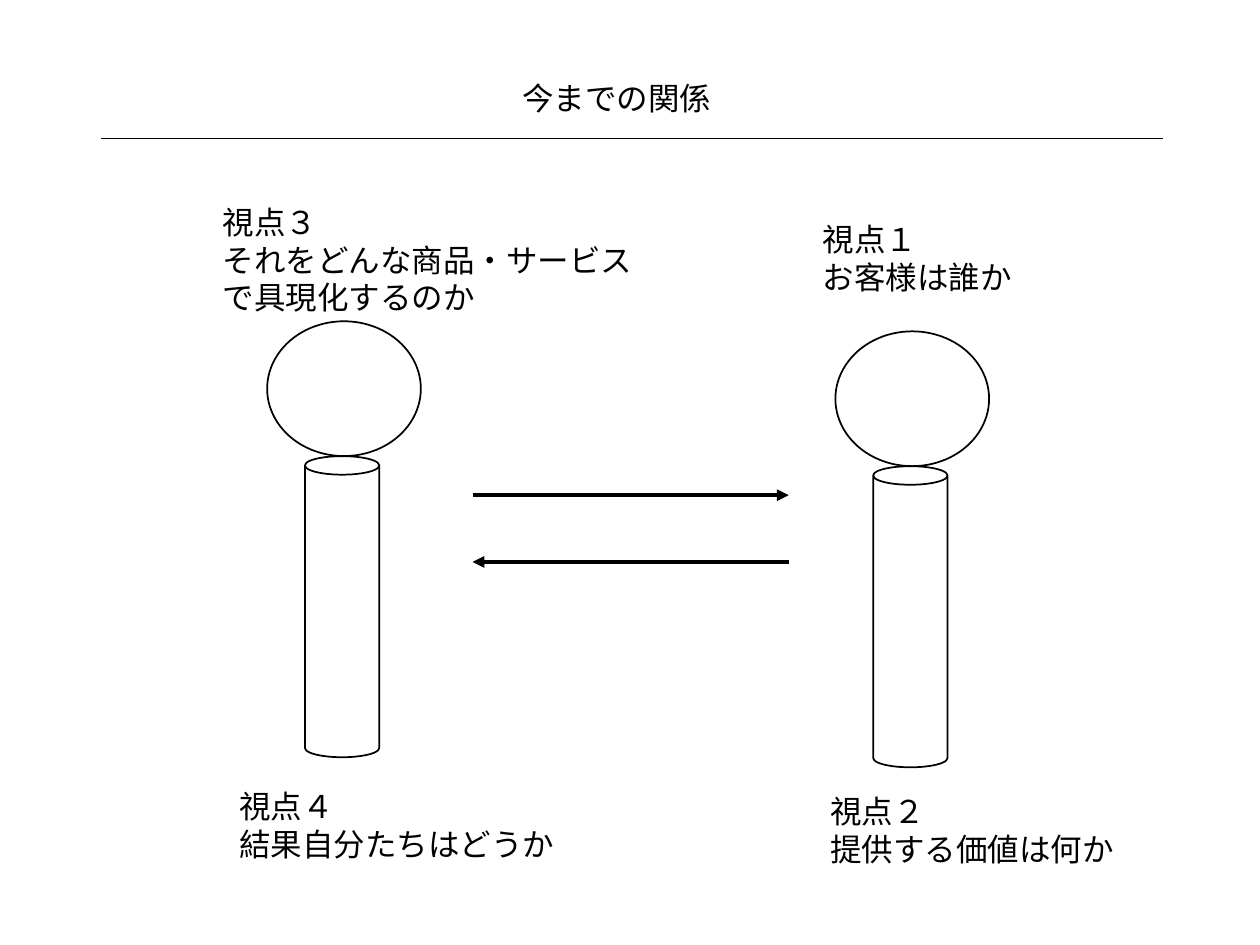
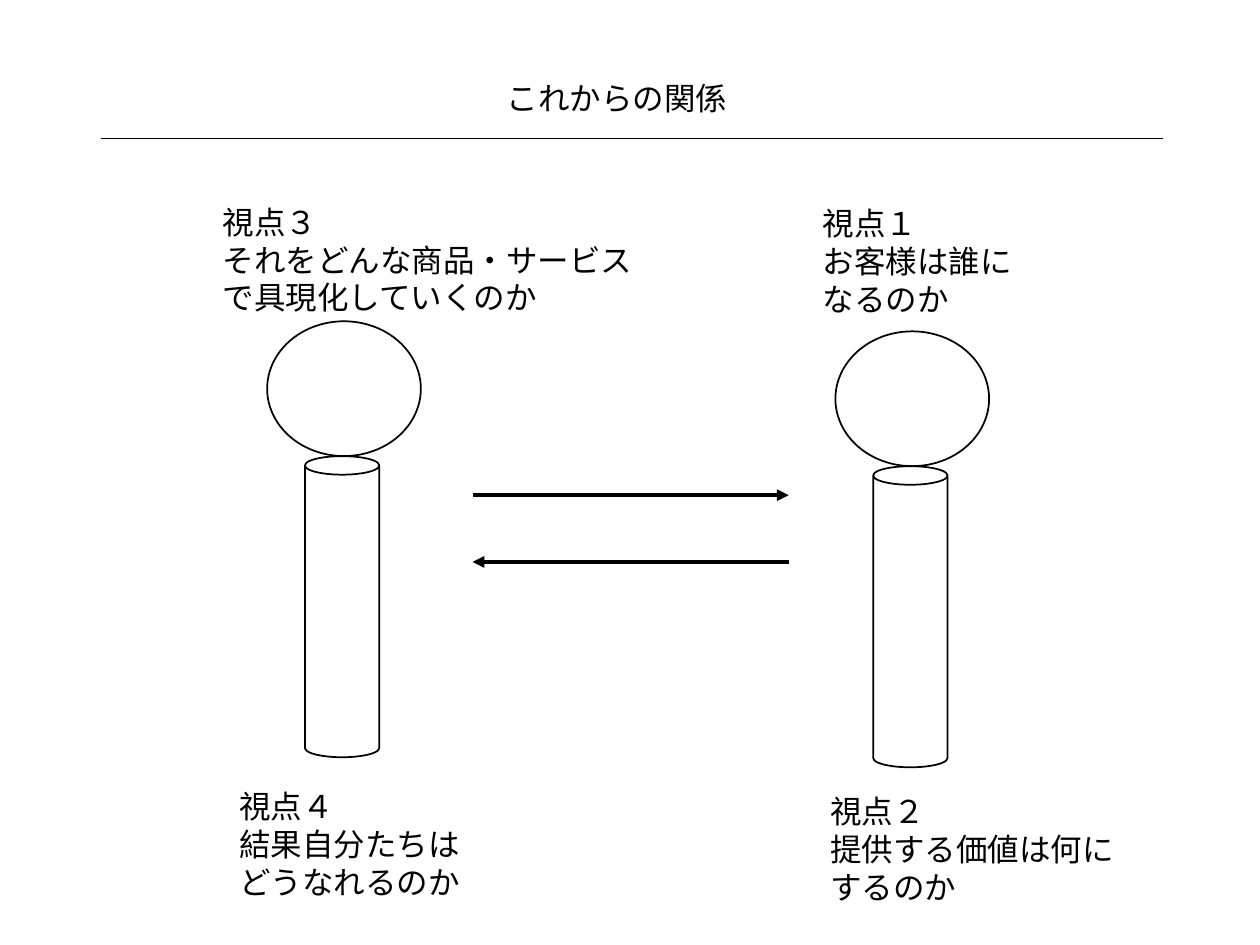
from pptx import Presentation
from pptx.dml.color import RGBColor
from pptx.enum.shapes import MSO_CONNECTOR, MSO_SHAPE
from pptx.enum.text import PP_ALIGN
from pptx.oxml.ns import qn
from pptx.util import Pt
from lxml.etree import SubElement

PX = 9144
BLACK = "000000"
WHITE = "FFFFFF"
FONT = "Calibri"

TITLE_BOX = (149, 58, 681, 40)
FIGURE_BOXES = [(212, 255, 122, 346), (663, 263, 122, 346)]
ARROWS_BOX = (375, 393, 251, 53)

SLIDES = [
    ("今までの関係", [
        ((643, 170, 188, 71), ["視点１", "お客様は誰か"]),
        ((649, 624, 274, 71), ["視点２", "提供する価値は何か"]),
        ((167, 156, 346, 101), ["視点３", "それをどんな商品・サービスで具現化するのか"]),
        ((180, 620, 291, 71), ["視点４", "結果自分たちはどうか"]),
    ]),
    ("これからの関係", [
        ((643, 157, 188, 101), ["視点１", "お客様は誰になるのか"]),
        ((649, 624, 248, 101), ["視点２", "提供する価値は何にするのか"]),
        ((167, 156, 346, 101), ["視点３", "それをどんな商品・サービスで具現化していくのか"]),
        ((180, 620, 291, 101), ["視点４", "結果自分たちは", "どうなれるのか"]),
    ]),
]


def emu(*lengths):
    return [n * PX for n in lengths]


def color(value):
    return RGBColor.from_string(value)


def add_text(s, box, lines, align=PP_ALIGN.LEFT):
    tf = s.shapes.add_textbox(*emu(*box)).text_frame
    tf.word_wrap = True
    tf.text = "\n".join(lines)
    for p in tf.paragraphs:
        p.alignment = align
        for r in p.runs:
            r.font.name = FONT
            r.font.size = Pt(18)
            r.font.color.rgb = color(BLACK)


def add_line(s, start, end, width, arrow=False):
    line = s.shapes.add_connector(MSO_CONNECTOR.STRAIGHT, *emu(*start, *end))
    line.line.color.rgb = color(BLACK)
    line.line.width = Pt(width)
    if arrow:
        SubElement(line.line._get_or_add_ln(), qn("a:tailEnd"), type="triangle")
    SubElement(line._element.spPr, qn("a:effectLst"))


def add_outline(s, kind, box):
    sp = s.shapes.add_shape(kind, *emu(*box))
    sp.shadow.inherit = False
    sp.fill.solid()
    sp.fill.fore_color.rgb = color(WHITE)
    sp.line.color.rgb = color(BLACK)
    sp.line.width = Pt(1)


def add_title(s, box, title):
    left, top, width, height = box
    add_text(s, box, [title], PP_ALIGN.CENTER)
    rule_y = top + height + 12
    add_line(s, (left - 69, rule_y), (left + width + 93, rule_y), 0.5)


def add_figure(s, box):
    left, top, width, height = box
    head_height, body_width = 107, 59
    add_outline(s, MSO_SHAPE.OVAL, (left, top, width, head_height))
    add_outline(s, MSO_SHAPE.CAN, (left + (width - body_width) // 2 - 1, top + head_height,
                                   body_width, height - head_height))


def add_exchange(s, box):
    left, top, width, height = box
    right, bottom = left + width, top + height
    add_line(s, (left, top), (right, top), 2.25, arrow=True)
    add_line(s, (right, bottom), (left, bottom), 2.25, arrow=True)


def add_relation_slide(prs, title, viewpoints):
    s = prs.slides.add_slide(prs.slide_layouts[6])
    add_title(s, TITLE_BOX, title)
    for box in FIGURE_BOXES:
        add_figure(s, box)
    for box, lines in viewpoints:
        add_text(s, box, lines)
    add_exchange(s, ARROWS_BOX)


def main():
    prs = Presentation()
    prs.slide_width, prs.slide_height = emu(1000, 750)
    for title, viewpoints in SLIDES:
        add_relation_slide(prs, title, viewpoints)
    prs.save("out.pptx")


if __name__ == "__main__":
    main()
